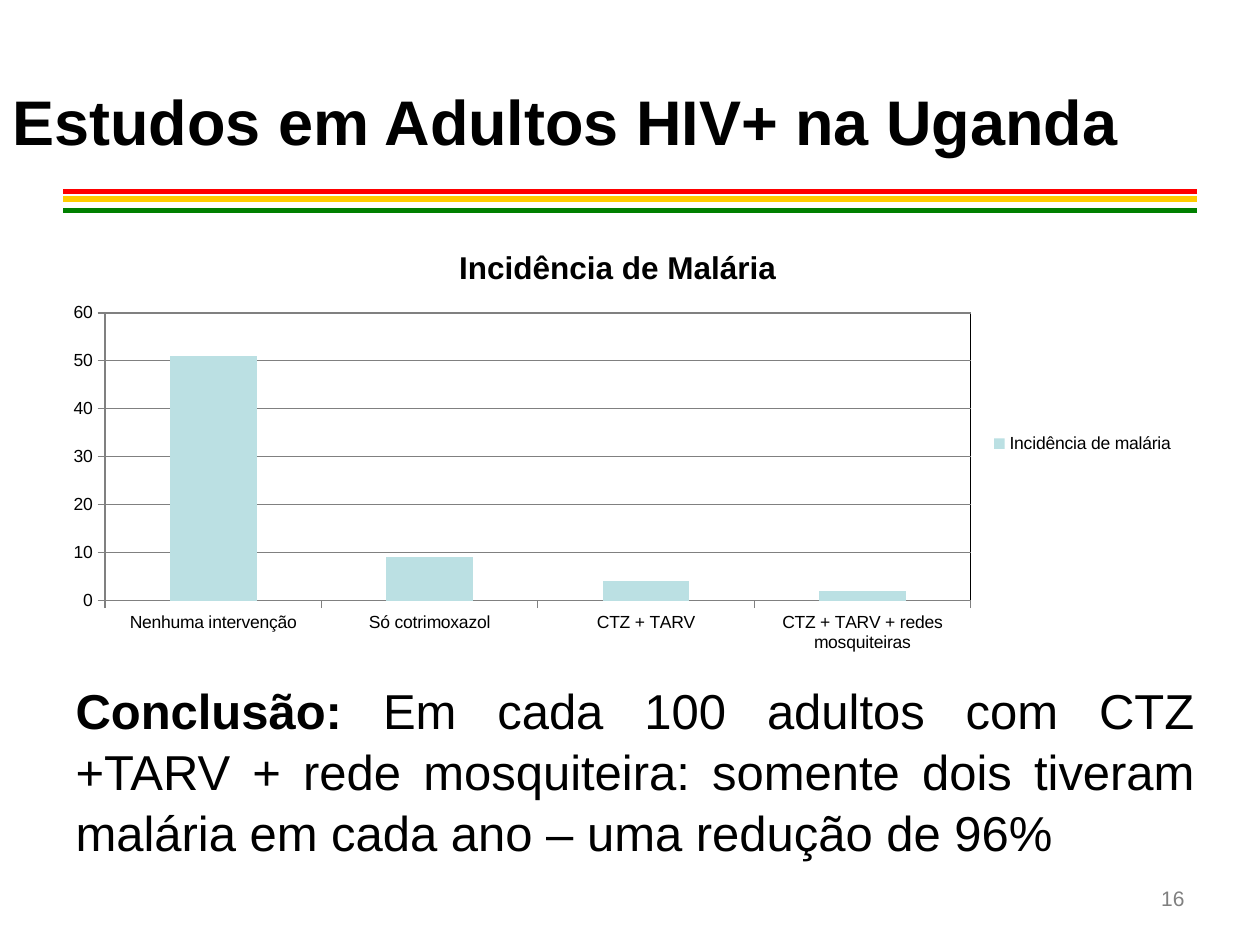
from lxml.etree import SubElement
from pptx import Presentation
from pptx.chart.data import CategoryChartData
from pptx.dml.color import RGBColor
from pptx.enum.chart import XL_CHART_TYPE, XL_LEGEND_POSITION, XL_TICK_MARK
from pptx.enum.shapes import MSO_CONNECTOR
from pptx.enum.text import MSO_ANCHOR, MSO_AUTO_SIZE, PP_ALIGN
from pptx.oxml import parse_xml
from pptx.oxml.ns import nsdecls, qn
from pptx.util import Cm, Pt


def color(value):
    return RGBColor.from_string(value)


class SlideBuilder:
    font_name = "Arial"
    black = "000000"
    gray = "808080"

    def __init__(self, presentation):
        self.slide = presentation.slides.add_slide(presentation.slide_layouts[1])

    def style(self, font, size, value=black, bold=False):
        font.name = self.font_name
        font.size = Pt(size)
        font.bold = bold
        font.color.rgb = color(value)

    def place(self, shape, left, top, width, height):
        shape.left, shape.top = Cm(left), Cm(top)
        shape.width, shape.height = Cm(width), Cm(height)
        frame = shape.text_frame
        frame.word_wrap = True
        frame.auto_size = MSO_AUTO_SIZE.NONE
        return frame

    def title(self, text, *box):
        frame = self.place(self.slide.shapes.title, *box)
        frame.vertical_anchor = MSO_ANCHOR.MIDDLE
        paragraph = frame.paragraphs[0]
        paragraph.text = text
        paragraph.alignment = PP_ALIGN.LEFT
        self.style(paragraph.font, 36, bold=True)

    def body(self, label, text, *box):
        frame = self.place(self.slide.placeholders[1], *box)
        paragraph = frame.paragraphs[0]
        paragraph.alignment = PP_ALIGN.JUSTIFY
        paragraph.space_before = Pt(0)
        paragraph.line_spacing = 1.04
        properties = paragraph._p.get_or_add_pPr()
        properties.set("marL", "0")
        properties.set("indent", "0")
        SubElement(properties, qn("a:buNone"))
        for content, bold in ((label, True), (text, False)):
            run = paragraph.add_run()
            run.text = content
            self.style(run.font, 28, bold=bold)

    def slide_number(self, text, *box):
        shape = self.slide.shapes.add_textbox(0, 0, 0, 0)
        frame = self.place(shape, *box)
        paragraph = frame.paragraphs[0]
        paragraph.text = text
        paragraph.alignment = PP_ALIGN.RIGHT
        self.style(paragraph.font, 12, self.gray)

    def rule(self, left, right, top, value):
        line = self.slide.shapes.add_connector(
            MSO_CONNECTOR.STRAIGHT, Cm(left), Cm(top), Cm(right), Cm(top))
        line.line.color.rgb = color(value)
        line.line.width = Pt(3)
        SubElement(line._element.spPr, qn("a:effectLst"))

    def column_chart(self, title, series_name, values, fill, *box):
        data = CategoryChartData()
        data.categories = values.keys()
        data.add_series(series_name, values.values())
        chart = self.slide.shapes.add_chart(
            XL_CHART_TYPE.COLUMN_CLUSTERED, *map(Cm, box), data).chart
        self.style(chart.font, 10)
        chart.has_title = True
        heading = chart.chart_title.text_frame.paragraphs[0]
        heading.text = title
        self.style(heading.font, 18, bold=True)
        chart.has_legend = True
        chart.legend.position = XL_LEGEND_POSITION.RIGHT
        chart.legend.include_in_layout = False
        plot = chart.plots[0]
        plot.gap_width = 150
        plot.vary_by_categories = False
        plot.series[0].format.fill.solid()
        plot.series[0].format.fill.fore_color.rgb = color(fill)
        value_axis = chart.value_axis
        value_axis.minimum_scale = 0
        value_axis.maximum_scale = 60
        value_axis.major_unit = 10
        value_axis.has_major_gridlines = True
        for line in (value_axis.format.line, chart.category_axis.format.line,
                     value_axis.major_gridlines.format.line):
            line.color.rgb = color(self.gray)
            line.width = Pt(0.75)
        for axis in (value_axis, chart.category_axis):
            axis.major_tick_mark = XL_TICK_MARK.OUTSIDE
        self.plot_area(chart, x=0.05, y=0.2, w=0.76, h=0.66)

    def plot_area(self, chart, **fractions):
        area = chart._chartSpace.chart.plotArea
        for layout in area.findall(qn("c:layout")):
            area.remove(layout)
        sizes = "".join(f'<c:{key} val="{value}"/>' for key, value in fractions.items())
        area.insert(0, parse_xml(
            f'<c:layout {nsdecls("c")}><c:manualLayout><c:layoutTarget val="inner"/>'
            f'<c:xMode val="edge"/><c:yMode val="edge"/>{sizes}'
            '</c:manualLayout></c:layout>'))
        area.append(parse_xml(
            f'<c:spPr {nsdecls("c", "a")}><a:noFill/><a:ln w="9525"><a:solidFill>'
            f'<a:srgbClr val="{self.black}"/></a:solidFill></a:ln></c:spPr>'))


def main():
    presentation = Presentation()
    presentation.slide_width = Cm(25.4)
    presentation.slide_height = Cm(19.05)
    builder = SlideBuilder(presentation)
    for top, value in ((4.01, "FFCC00"), (3.86, "FF0000"), (4.24, "008000")):
        builder.rule(1.27, 24.13, top, value)
    builder.slide_number("16", 21.16, 17.73, 2.97, 1.32)
    builder.title("Estudos em Adultos HIV+ na Uganda", 0, 0.84, 23.06, 3.18)
    builder.body(
        "Conclusão: ",
        "Em cada 100 adultos com CTZ +TARV + rede mosquiteira: "
        "somente dois tiveram malária em cada ano – uma redução de 96%",
        1.27, 13.54, 23.06, 3.6)
    incidence = {
        "Nenhuma intervenção": 51,
        "Só cotrimoxazol": 9,
        "CTZ + TARV": 4,
        "CTZ + TARV + redes mosquiteiras": 2,
    }
    builder.column_chart("Incidência de Malária", "Incidência de malária",
                         incidence, "BBE0E3", 0.97, 4.55, 22.96, 8.79)
    presentation.save("out.pptx")


if __name__ == "__main__":
    main()
